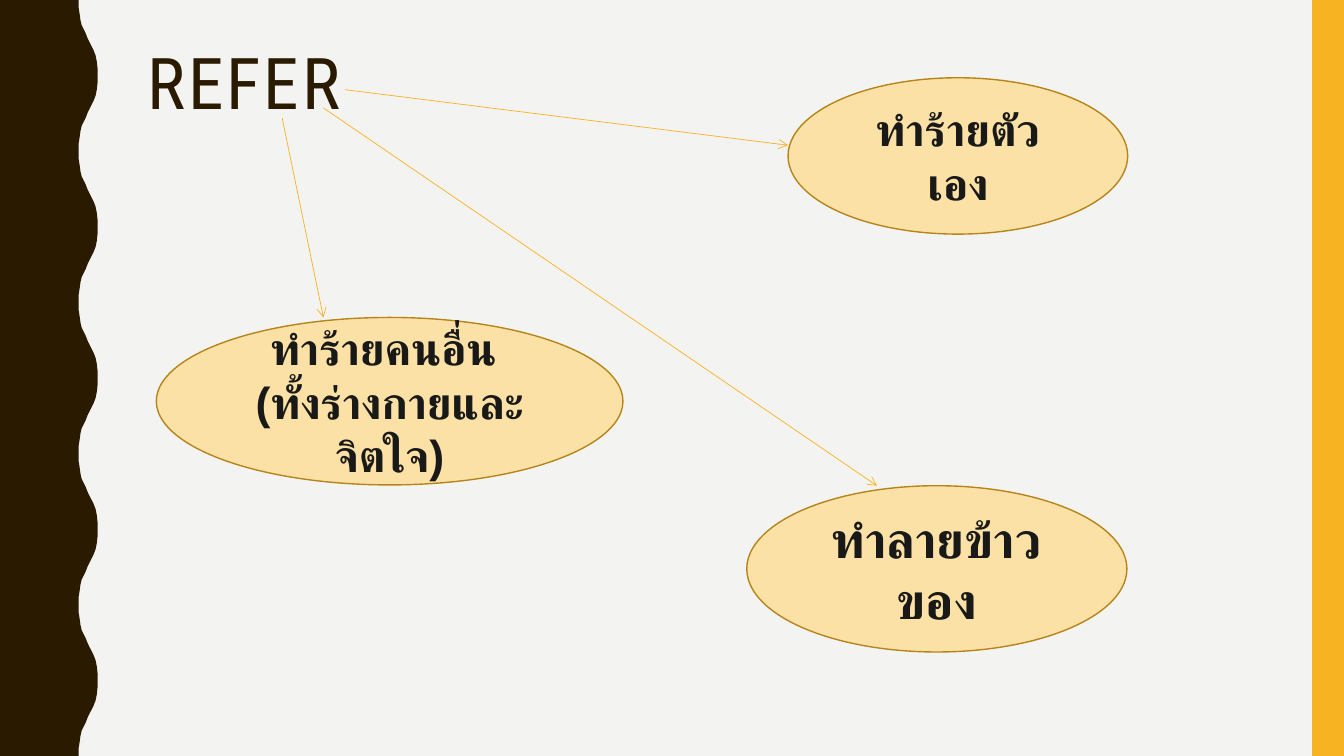
from pptx import Presentation
from pptx.dml.color import RGBColor
from pptx.enum.shapes import MSO_CONNECTOR, MSO_SHAPE
from pptx.enum.text import MSO_ANCHOR, PP_ALIGN
from pptx.oxml.ns import qn
from pptx.util import Cm, Pt
from lxml.etree import SubElement

WIDE, HIGH = 33.87, 19.05
COLORS = {"back": "F3F3F2", "brown": "2A1A00", "gold": "F8B323",
          "cream": "FCE1A7", "edge": "B7841A", "ink": "191917"}
TITLE = ("REFER", (3.48, 1.07, 28.27, 4.14))
BAR = (33.07, 0, 0.8, HIGH)
OVALS = [  # lines of text, size, box
    (["ทำร้ายตัวเอง"], 32, (19.86, 1.96, 8.56, 3.94)),
    (["ทำร้ายคนอื่น ", "(ทั้งร่างกายและจิตใจ)"], 32, (3.94, 8, 11.76, 4.22)),
    (["ทำลายข้าวของ"], 36, (18.82, 12.24, 9.58, 4.19)),
]
ARROWS = [(8.69, 2.26, 19.86, 3.66), (7.11, 2.97, 8.15, 8),
          (8.15, 2.72, 22.1, 12.24)]
WAVES = 5
CURVE = [(1.98, 0), (1.98, 0.18), (2.01, 0.36), (2.03, 0.51), (2.06, 0.64),
         (2.11, 0.74), (2.16, 0.84), (2.21, 0.97), (2.26, 1.07), (2.31, 1.17),
         (2.36, 1.27), (2.41, 1.4), (2.44, 1.55), (2.46, 1.73), (2.46, 1.9)]


def color(name):
    return RGBColor.from_string(COLORS[name])


def paint(shape, fill, edge=None):
    shape.shadow.inherit = False
    shape.fill.solid()
    shape.fill.fore_color.rgb = color(fill)
    if edge:
        shape.line.color.rgb = color(edge)
        shape.line.width = Pt(1)
    else:
        shape.line.fill.background()


def write(shape, lines, size, ink, font="Arial", bold=False, lang="th-TH",
          align=PP_ALIGN.CENTER, anchor=MSO_ANCHOR.MIDDLE, space=1, track=0):
    frame = shape.text_frame
    frame.word_wrap = True
    frame.vertical_anchor = anchor
    for i, line in enumerate(lines):
        para = frame.add_paragraph() if i else frame.paragraphs[0]
        para.alignment = align
        para.line_spacing = space
        run = para.add_run()
        run.text = line
        run.font.size, run.font.bold = Pt(size), bold
        run.font.name = font
        run.font.color.rgb = color(ink)
        props = run.font._element
        props.set("lang", lang)
        if track:
            props.set("spc", str(track * 100))
        SubElement(props, qn("a:cs")).set("typeface", font)


def draw_wave(shapes):
    """Left band whose right edge repeats CURVE down, then mirrored."""
    step = HIGH / WAVES
    turn = [(x, step - y) for x, y in reversed(CURVE)]
    edge = [(Cm(x), Cm(y + n * step))
            for n in range(WAVES) for x, y in CURVE + turn]
    form = shapes.build_freeform(0, 0)
    form.add_line_segments(edge + [(0, Cm(HIGH))], close=True)
    paint(form.convert_to_shape(), "brown")


def draw_arrow(shapes, ends):
    link = shapes.add_connector(MSO_CONNECTOR.STRAIGHT, *map(Cm, ends))
    link.line.color.rgb = color("gold")
    link.line.width = Pt(0.5)
    SubElement(link.line._get_or_add_ln(), qn("a:tailEnd")).set("type", "arrow")
    SubElement(link._element.spPr, qn("a:effectLst"))


def main():
    deck = Presentation()
    deck.slide_width, deck.slide_height = Cm(WIDE), Cm(HIGH)
    slide = deck.slides.add_slide(deck.slide_layouts[6])
    slide.background.fill.solid()
    slide.background.fill.fore_color.rgb = color("back")
    shapes = slide.shapes
    draw_wave(shapes)
    paint(shapes.add_shape(MSO_SHAPE.RECTANGLE, *map(Cm, BAR)), "gold")
    text, box = TITLE
    write(shapes.add_textbox(*map(Cm, box)), [text], 51, "brown",
          font="Roboto Condensed", lang="en-US", align=PP_ALIGN.LEFT,
          anchor=MSO_ANCHOR.TOP, space=0.9, track=2)
    for lines, size, box in OVALS:
        oval = shapes.add_shape(MSO_SHAPE.OVAL, *map(Cm, box))
        paint(oval, "cream", "edge")
        write(oval, lines, size, "ink", bold=True)
    for ends in ARROWS:
        draw_arrow(shapes, ends)
    deck.save("out.pptx")


if __name__ == "__main__":
    main()
